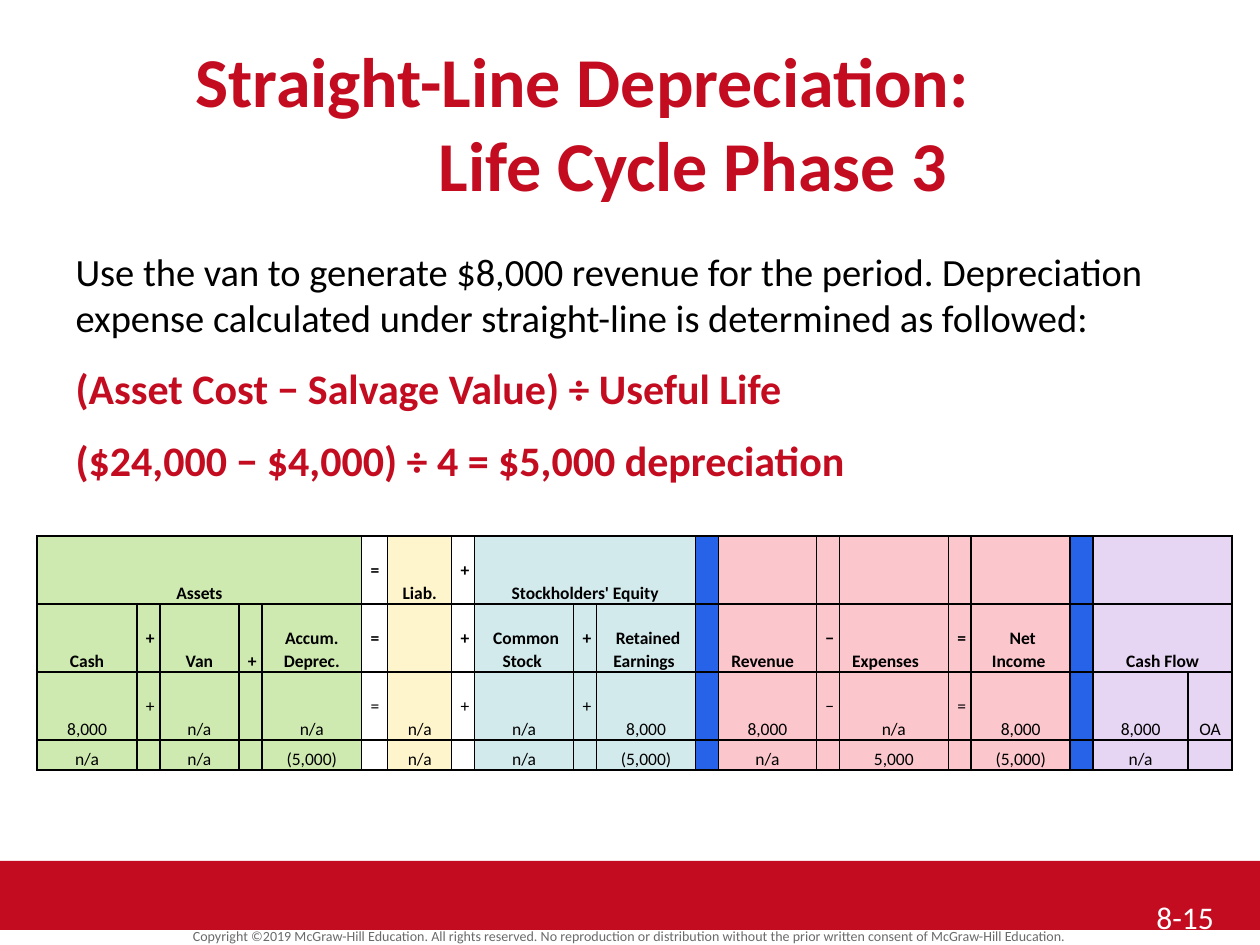
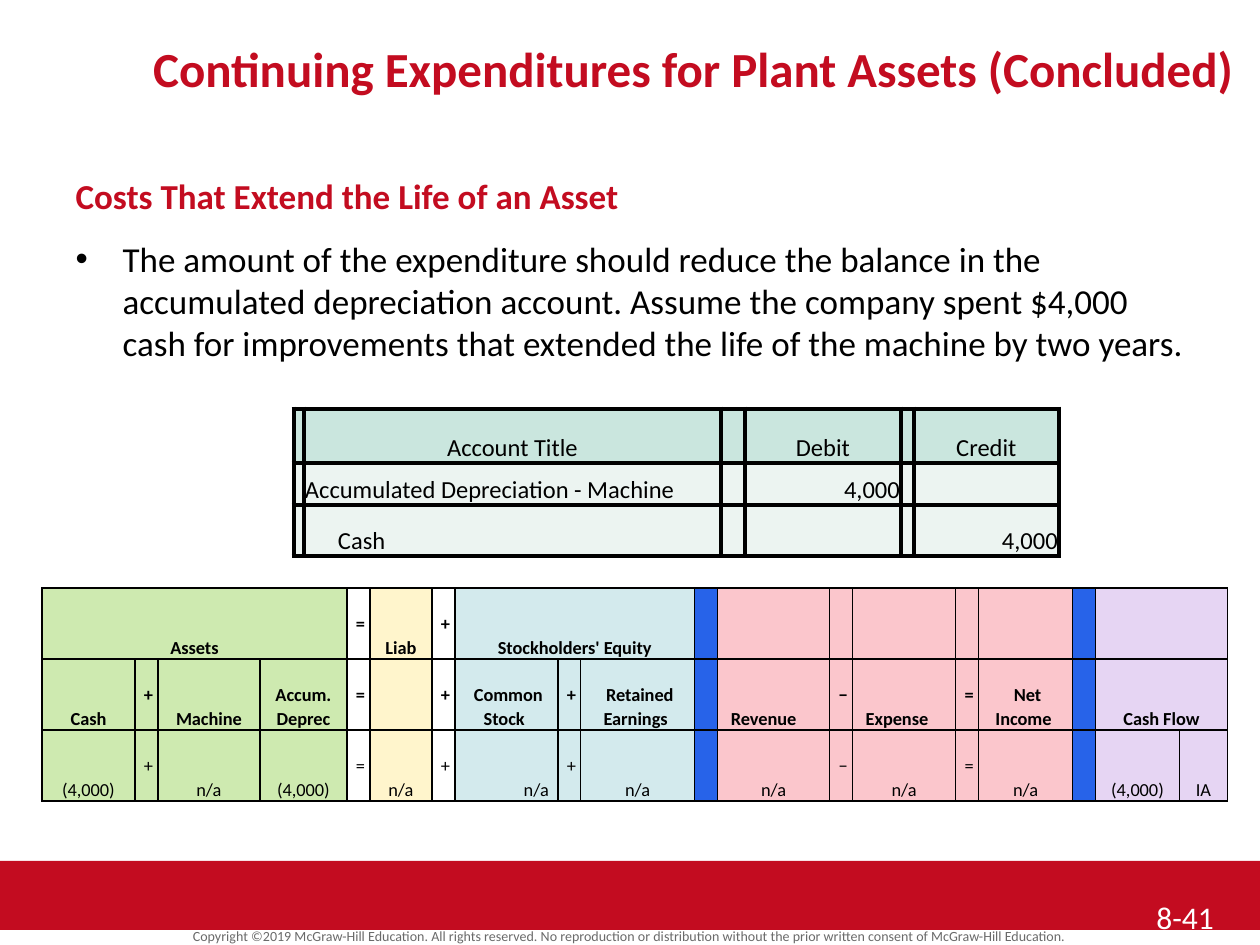
import pptx
import pptx.util
import pptx.dml.color
import pptx.enum.shapes
import pptx.enum.text
import lxml.etree
from pptx.oxml.ns import qn

# ---- Shared look ----
PX = 914400 // 126
FONT = "Calibri"
C = {"red": "C30C20", "black": "000000", "grey": "6A6A6A", "white": "FFFFFF",
     "green": "CEEAB0", "yellow": "FFF5CC", "teal": "D3EAED", "blue": "2763E9",
     "pink": "FBC6CC", "purple": "E6D5F3", "mint": "CAE6DE", "pale": "ECF4F1"}
ALIGN = {"l": pptx.enum.text.PP_ALIGN.LEFT, "c": pptx.enum.text.PP_ALIGN.CENTER,
         "r": pptx.enum.text.PP_ALIGN.RIGHT}
TOP = pptx.enum.text.MSO_ANCHOR.TOP
BOTTOM = pptx.enum.text.MSO_ANCHOR.BOTTOM

BAND = (0, 861, 1260, 69)
COPYRIGHT_BOX = (0, 925, 1260, 24)
NUMBER_BOX = (1144, 892, 116, 53)
TITLE_BOX = (126, 32, 1134, 84)
BODY_BOX = (63, 168, 1134, 651)
COPYRIGHT = ("Copyright ©2019 McGraw-Hill Education. All rights reserved. No reproduction "
             "or distribution without the prior written consent of McGraw-Hill Education.")

# ---- Content ----
TITLE = {"size": 40, "color": "red", "bold": True, "align": "c"}
BODY = {"align": "l", "after": 8}


def ledger_groups(assets):
    """Colour and column count of each group of accounts."""
    return [("green", assets), (None, 1), ("yellow", 1), (None, 1), ("teal", 3),
            ("blue", 1), ("pink", 5), ("blue", 1), ("purple", 2)]


SLIDES = [
    {
        "number": "8-15",
        "title": [
            {**TITLE, "text": "Straight-Line Depreciation:", "align": "l", "left": 57},
            {**TITLE, "text": "Life Cycle Phase 3"},
        ],
        "body_inset": 80,
        "body": [
            {**BODY, "size": 22, "text": "Use the van to generate $8,000 revenue for the period. "
             "Depreciation expense calculated under straight-line is determined as followed:"},
            {**BODY, "size": 24, "color": "red", "bold": True, "before": 4.4,
             "text": "(Asset Cost − Salvage Value) ÷ Useful Life"},
            {**BODY, "size": 24, "color": "red", "bold": True, "before": 4.4,
             "text": "($24,000 − $4,000) ÷ 4 = $5,000 depreciation"},
        ],
        "ledger": {
            "at": (37, 536), "size": 10, "groups": ledger_groups(5),
            "cols": [100, 22, 79, 22, 100, 26, 64, 22, 99, 22, 99, 22, 98, 22, 109, 22, 99,
                     22, 95, 44],
            "heights": [68, 68, 68, 30],
            "aligns": {(1, 12): "l", (1, 14): "l"},
            "rows": [
                "Assets||||| = | Liab. | + | Stockholders' Equity |||||||||||",
                "Cash| + |Van|+|Accum. Deprec.| = || + | Common Stock | + | Retained Earnings |"
                "| Revenue| − | Expenses| = | Net Income || Cash Flow |",
                "8,000| + |n/a||n/a| = |n/a| + |n/a| + |8,000||8,000| − |n/a| = |8,000||8,000|OA",
                "n/a||n/a||(5,000)||n/a||n/a||(5,000)||n/a||5,000||(5,000)||n/a|",
            ],
        },
    },
    {
        "number": "8-41",
        "title": [{**TITLE, "size": 28,
                   "text": "Continuing Expenditures for Plant Assets (Concluded)"}],
        "body_inset": 6,
        "body": [
            {**BODY, "size": 20, "color": "red", "bold": True,
             "text": "Costs That Extend the Life of an Asset"},
            {**BODY, "size": 20, "before": 4, "left": 47, "indent": -47, "bullet": "•",
             "text": "The amount of the expenditure should reduce the balance in the accumulated "
             "depreciation account. Assume the company spent $4,000 cash for improvements that "
             "extended the life of the machine by two years."},
        ],
        "ledger": {
            "at": (42, 588), "size": 10.5, "groups": ledger_groups(4),
            "cols": [93, 23, 102, 87, 23, 62, 23, 103, 23, 114, 23, 112, 23, 103, 23, 94, 23,
                     84, 48],
            "heights": [71, 71, 71],
            "aligns": {(1, 11): "l", (1, 13): "l", (2, 7): "r"},
            "rows": [
                "Assets|||| = | Liab | + | Stockholders' Equity |||||||||||",
                "Cash| + |Machine|Accum. Deprec| = || + | Common Stock | + | Retained Earnings |"
                "| Revenue| − | Expense| = | Net Income || Cash Flow |",
                "(4,000)| + |n/a|(4,000)| = |n/a| + |n/a| + |n/a||n/a| − |n/a| = |n/a||(4,000)|IA",
            ],
        },
        "journal": {
            "at": (294, 409), "cols": [10, 417, 24, 156, 13, 145], "heights": [54, 42, 51],
            "aligns": {(1, 1): "l", (1, 3): "r", (2, 1): "l", (2, 5): "r"},
            "insets": {(2, 1): 34},
            "rows": ["|Account Title||Debit||Credit",
                     "|Accumulated Depreciation - Machine||4,000||",
                     "|Cash||||4,000"],
        },
    },
]


# ---- Helpers ----
def px(*values):
    return [v * PX for v in values]


def rgb(name):
    return pptx.dml.color.RGBColor.from_string(C[name])


def put(obj, **values):
    for name, value in values.items():
        setattr(obj, name, value)


def write(tf, paras):
    """Fill a text frame from a list of paragraph dicts."""
    for i, d in enumerate(paras):
        p = tf.paragraphs[0] if i == 0 else tf.add_paragraph()
        put(p, alignment=ALIGN[d["align"]], space_before=pptx.util.Pt(d.get("before", 0)),
            space_after=pptx.util.Pt(d.get("after", 0)), line_spacing=d.get("spacing", 1.0))
        pPr = p._p.get_or_add_pPr()
        pPr.set("marL", str(d.get("left", 0) * PX))
        pPr.set("indent", str(d.get("indent", 0) * PX))
        if "bullet" in d:
            lxml.etree.SubElement(pPr, qn("a:buChar")).set("char", d["bullet"])
        else:
            lxml.etree.SubElement(pPr, qn("a:buNone"))
        if not d["text"]:
            end = lxml.etree.SubElement(p._p, qn("a:endParaRPr"))
            end.set("sz", str(int(d["size"] * 100)))
            continue
        r = p.add_run()
        r.text = d["text"]
        put(r.font, name=FONT, size=pptx.util.Pt(d["size"]), bold=d.get("bold", False))
        r.font.color.rgb = rgb(d.get("color", "black"))


def fill_placeholder(sp, box, paras, inset=6):
    left, top, width, height = px(*box)
    put(sp, left=left, top=top, width=width, height=height)
    put(sp.text_frame, word_wrap=True, auto_size=pptx.enum.text.MSO_AUTO_SIZE.NONE,
        vertical_anchor=TOP, margin_top=inset * PX)
    write(sp.text_frame, paras)


def add_label(s, box, para):
    tf = s.shapes.add_textbox(*px(*box)).text_frame
    tf.word_wrap = True
    write(tf, [para])


def add_grid(s, d):
    """Add an empty table with its column widths and row heights."""
    cols, heights = d["cols"], d["heights"]
    frame = s.shapes.add_table(len(heights), len(cols),
                               *px(*d["at"], sum(cols), sum(heights)))
    table = frame.table
    put(table, first_row=False, horz_banding=False)
    for col, width in zip(table.columns, cols):
        col.width = width * PX
    for row, height in zip(table.rows, heights):
        row.height = height * PX
    return table


def style_cell(cell, fill, line, margins, para):
    names = ("margin_left", "margin_top", "margin_right", "margin_bottom")
    put(cell, vertical_anchor=BOTTOM, **dict(zip(names, px(*margins))))
    tcPr = cell._tc.get_or_add_tcPr()
    for side in ("lnL", "lnR", "lnT", "lnB"):
        ln = lxml.etree.SubElement(tcPr, qn("a:" + side))
        ln.set("w", str(line * 12700))
        solid = lxml.etree.SubElement(ln, qn("a:solidFill"))
        lxml.etree.SubElement(solid, qn("a:srgbClr")).set("val", C["black"])
    if fill:
        cell.fill.solid()
        cell.fill.fore_color.rgb = rgb(fill)
    else:
        cell.fill.background()
    write(cell.text_frame, [para])


def add_ledger(s, d):
    """Horizontal statements model: one colour per group of columns."""
    table = add_grid(s, d)
    fills = [color for color, count in d["groups"] for _ in range(count)]
    for r, row in enumerate(d["rows"]):
        for c, text in enumerate(row.split("|")):
            style_cell(table.cell(r, c), fills[c], 1, (9, 0, 9, 0),
                       {"text": text, "size": d["size"], "bold": r < 2, "spacing": 1.07,
                        "align": d["aligns"].get((r, c), "c")})
    # Group headings span their columns
    start = 0
    for color, count in d["groups"]:
        if color in ("green", "teal", "purple"):
            table.cell(0, start).merge(table.cell(0, start + count - 1))
        if color == "purple":
            table.cell(1, start).merge(table.cell(1, start + count - 1))
        start += count


def add_journal(s, d):
    table = add_grid(s, d)
    for r, row in enumerate(d["rows"]):
        for c, text in enumerate(row.split("|")):
            style_cell(table.cell(r, c), "pale" if r else "mint", 3,
                       (d["insets"].get((r, c), 1), 1, 1, 0),
                       {"text": text, "size": 14, "align": d["aligns"].get((r, c), "c")})


def add_footer(s, number):
    sp = s.shapes.add_shape(pptx.enum.shapes.MSO_SHAPE.RECTANGLE, *px(*BAND))
    sp.shadow.inherit = False
    sp.fill.solid()
    sp.fill.fore_color.rgb = rgb("red")
    sp.line.fill.background()
    add_label(s, COPYRIGHT_BOX, {"text": COPYRIGHT, "size": 8, "color": "grey",
                                 "align": "c", "spacing": 0.8})
    add_label(s, NUMBER_BOX, {"text": number, "size": 18, "color": "white", "align": "l"})


# ---- Build ----
def main():
    prs = pptx.Presentation()
    put(prs, slide_width=pptx.util.Inches(10), slide_height=pptx.util.Inches(7.5))
    for d in SLIDES:
        s = prs.slides.add_slide(prs.slide_layouts[1])
        add_footer(s, d["number"])
        fill_placeholder(s.shapes.title, TITLE_BOX, d["title"])
        fill_placeholder(s.placeholders[1], BODY_BOX, d["body"], d["body_inset"])
        add_ledger(s, d["ledger"])
        if "journal" in d:
            add_journal(s, d["journal"])
    prs.save("out.pptx")


if __name__ == "__main__":
    main()
